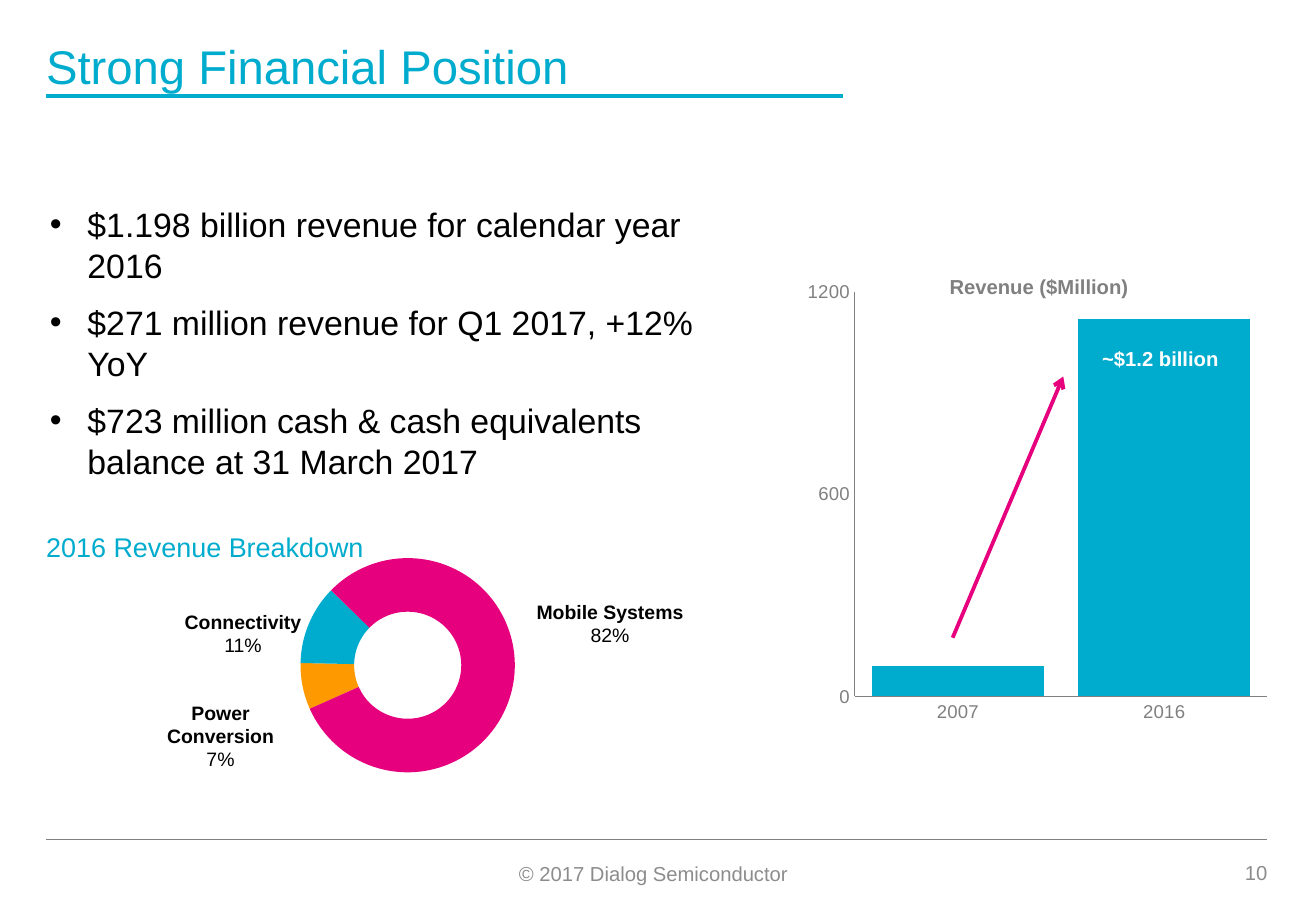
from lxml.etree import SubElement
from pptx import Presentation
from pptx.chart.data import CategoryChartData
from pptx.dml.color import RGBColor
from pptx.enum.chart import XL_CHART_TYPE, XL_TICK_MARK
from pptx.enum.shapes import MSO_CONNECTOR
from pptx.enum.text import MSO_ANCHOR, PP_ALIGN
from pptx.oxml import parse_xml
from pptx.oxml.ns import nsdecls, qn
from pptx.util import Pt

PX = 9144  # one px is a hundredth of an inch
TEAL, MAGENTA, ORANGE = "00ACCD", "E6007E", "FF9900"
BLACK, WHITE, GREY, FOOTER_GREY = "000000", "FFFFFF", "808080", "8C8C8C"
rgb = RGBColor.from_string


def style(font, size, color, bold=False):
    values = {"name": "Arial", "size": Pt(size), "bold": bold}
    for attribute, value in values.items():
        setattr(font, attribute, value)
    font.color.rgb = rgb(color)


def place_in_chart(parent, index, target, position):
    """Give a chart part a fixed place, in fractions of the chart."""
    for old in parent.findall(qn("c:layout")):
        parent.remove(old)
    numbers = "".join(f'<c:{key} val="{value}"/>' for key, value in zip("xywh", position))
    parent.insert(index, parse_xml(
        f'<c:layout {nsdecls("c")}><c:manualLayout>{target}'
        f'<c:xMode val="edge"/><c:yMode val="edge"/>{numbers}'
        "</c:manualLayout></c:layout>"))


INNER = '<c:layoutTarget val="inner"/>'

prs = Presentation()
prs.slide_width, prs.slide_height = 1083 * PX, 750 * PX
slide = prs.slides.add_slide(prs.slide_layouts[1])
shapes = slide.shapes

# Title and key figures
title, key_figures = shapes.title, slide.placeholders[1]
for placeholder, place in ((title, (38, 36, 672, 85)), (key_figures, (41, 168, 562, 213))):
    placeholder.left, placeholder.top, placeholder.width, placeholder.height = [n * PX for n in place]
    frame = placeholder.text_frame
    frame.margin_left = frame.margin_right = frame.margin_top = frame.margin_bottom = 0
    frame.vertical_anchor = MSO_ANCHOR.TOP
    frame.word_wrap = True

title.text_frame.text = "Strong Financial Position"
headline = title.text_frame.paragraphs[0]
headline.alignment = PP_ALIGN.LEFT
headline.line_spacing = 0.9
style(headline.runs[0].font, 28, TEAL)

key_figures.text_frame.text = "\n".join((
    "$1.198 billion revenue for calendar year 2016",
    "$271 million revenue for Q1 2017, +12% YoY",
    "$723 million cash & cash equivalents balance at 31 March 2017",
))
for number, figure in enumerate(key_figures.text_frame.paragraphs):
    properties = figure._p.get_or_add_pPr()
    properties.set("marL", str(31 * PX))
    properties.set("indent", str(-31 * PX))
    SubElement(properties, qn("a:buFont"), typeface="Arial")
    SubElement(properties, qn("a:buChar"), char="•")
    figure.space_before = Pt(4 if number else 0)
    figure.space_after = Pt(6)
    style(figure.runs[0].font, 20, BLACK)

# Revenue column chart
revenue = CategoryChartData()
revenue.categories = ["2007", "2016"]
revenue.add_series("Series 1", (90, 1120))
columns = shapes.add_chart(XL_CHART_TYPE.COLUMN_CLUSTERED,
                           *[n * PX for n in (656, 181, 395, 422)], revenue).chart
style(columns.font, 10, GREY)
columns.has_legend = False
columns.has_title = True
columns.chart_title.text_frame.text = "Revenue ($Million)"
style(columns.chart_title.text_frame.paragraphs[0].runs[0].font, 12, GREY, True)
place_in_chart(columns.chart_title._element, 1, "", (0.31, 0.1))
place_in_chart(columns._chartSpace.chart.plotArea, 0, INNER, (0.12, 0.14, 0.86, 0.79))

for axis in (columns.category_axis, columns.value_axis):
    axis.has_major_gridlines = False
    axis.major_tick_mark = axis.minor_tick_mark = XL_TICK_MARK.NONE
    axis.format.line.color.rgb = rgb(GREY)
    axis.format.line.width = Pt(0.75)
    style(axis.tick_labels.font, 11, GREY)
for attribute, value in {"minimum_scale": 0, "maximum_scale": 1200, "major_unit": 600}.items():
    setattr(columns.value_axis, attribute, value)

column_plot = columns.plots[0]
column_plot.gap_width = 20
column_plot.vary_by_categories = False
column_fill = column_plot.series[0].format.fill
column_fill.solid()
column_fill.fore_color.rgb = rgb(TEAL)

# Revenue breakdown doughnut
breakdown = CategoryChartData()
breakdown.categories = ["1", "2", "3"]
breakdown.add_series("Series 1", (7, 12, 81))
doughnut = shapes.add_chart(XL_CHART_TYPE.DOUGHNUT,
                            *[n * PX for n in (216, 454, 392, 206)], breakdown).chart
style(doughnut.font, 18, BLACK)
doughnut.has_legend = doughnut.has_title = False
place_in_chart(doughnut._chartSpace.chart.plotArea, 0, INNER, (0.08, 0.01, 0.45, 0.89))
ring = doughnut.plots[0]
for tag, value in (("c:firstSliceAng", "246"), ("c:holeSize", "55")):
    ring._element.find(qn(tag)).set("val", value)
for number, color in enumerate((ORANGE, TEAL, MAGENTA)):
    slice_format = ring.series[0].points[number].format
    slice_format.fill.solid()
    slice_format.fill.fore_color.rgb = rgb(color)
    slice_format.line.fill.background()

# Title rule, footer rule and growth arrow
for start_x, start_y, end_x, end_y, color, width, head in (
    (38, 79, 694, 79, TEAL, 2, None),
    (38, 691, 1043, 691, GREY, 0.5, None),
    (784, 525, 875, 310, MAGENTA, 2.25, "arrow"),
):
    rule = shapes.add_connector(MSO_CONNECTOR.STRAIGHT, start_x * PX, start_y * PX,
                                end_x * PX, end_y * PX)
    rule.line.color.rgb = rgb(color)
    rule.line.width = Pt(width)
    if head:
        SubElement(rule.line._get_or_add_ln(), qn("a:tailEnd"), type=head)
    SubElement(rule._element.spPr, qn("a:effectLst"))

# Chart captions, slice labels and footer: place, margin, alignment, anchor, lines
LEFT, CENTER, RIGHT = PP_ALIGN.LEFT, PP_ALIGN.CENTER, PP_ALIGN.RIGHT
TOP, MIDDLE = MSO_ANCHOR.TOP, MSO_ANCHOR.MIDDLE
captions = [
    ((885, 280, 140, 30), 5, CENTER, TOP, [("~$1.2 billion", 12, WHITE, True)]),
    ((38, 437, 345, 30), 0, LEFT, TOP, [("2016 Revenue Breakdown", 16, TEAL, False)]),
    ((427, 709, 228, 20), 0, LEFT, MIDDLE,
     [("© 2017 Dialog Semiconductor", 12, FOOTER_GREY, False)]),
    ((979, 708, 64, 20), 0, RIGHT, MIDDLE, [("10", 12, FOOTER_GREY, False)]),
]
for segment, share, place in (
    ("Power Conversion", "7%", (111, 576, 141, 60)),
    ("Connectivity", "11%", (111, 501, 178, 41)),
    ("Mobile Systems", "82%", (413, 493, 178, 41)),
):
    captions.append((place, 1, CENTER, TOP,
                     [(segment, 11.5, BLACK, True), (share, 11.5, BLACK, False)]))

for place, margin, alignment, anchor, lines in captions:
    frame = shapes.add_textbox(*[n * PX for n in place]).text_frame
    frame.word_wrap = True
    frame.vertical_anchor = anchor
    frame.margin_left = frame.margin_right = margin * PX
    frame.margin_top = frame.margin_bottom = margin * PX
    frame.text = "\n".join(line[0] for line in lines)
    for paragraph, (_, size, color, bold) in zip(frame.paragraphs, lines):
        paragraph.alignment = alignment
        style(paragraph.runs[0].font, size, color, bold)

prs.save("out.pptx")
